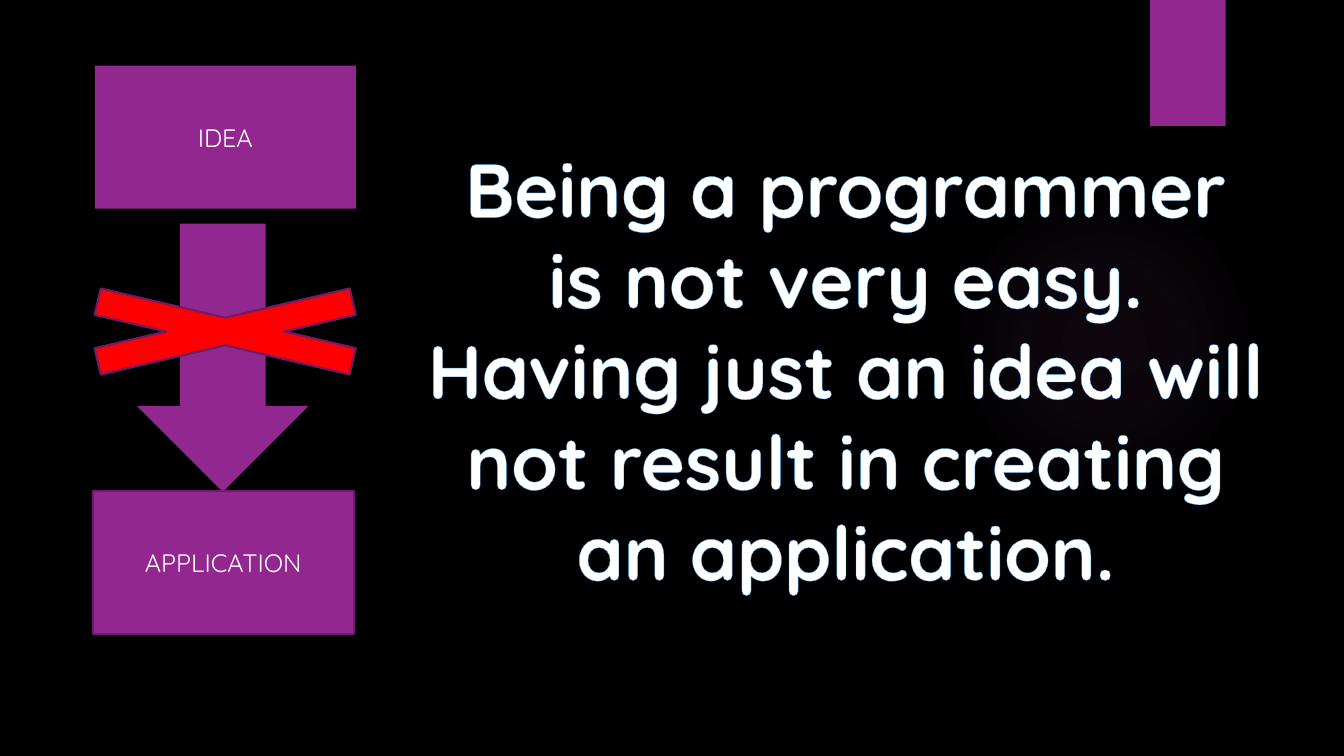
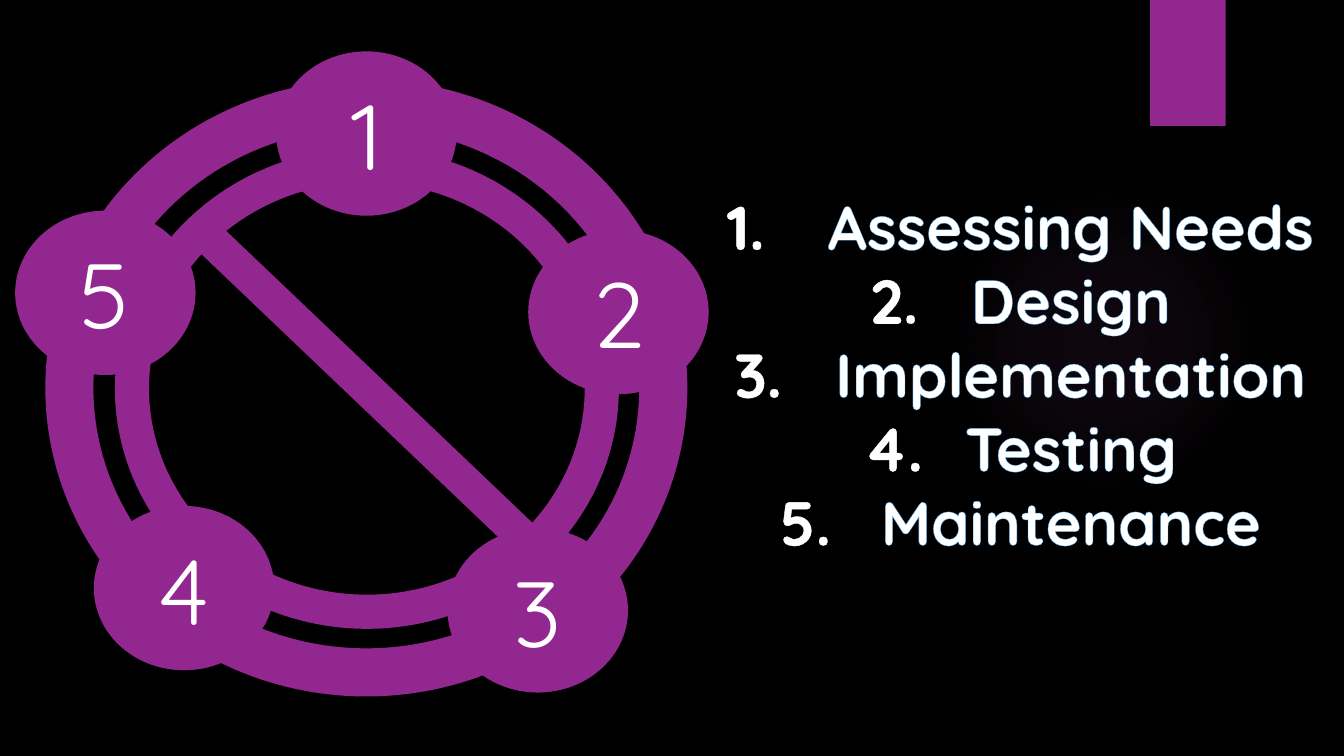
from dataclasses import dataclass
from typing import NamedTuple, Optional

from lxml import etree
from pptx import Presentation
from pptx.dml.color import RGBColor
from pptx.enum.shapes import MSO_SHAPE as Geom
from pptx.enum.text import MSO_ANCHOR as Anchor, MSO_AUTO_SIZE as AutoSize, PP_ALIGN as Align
from pptx.oxml import parse_xml
from pptx.oxml.ns import nsdecls, qn
from pptx.util import Pt


@dataclass(frozen=True)
class Theme:
    font: str = "Quicksand"
    background: RGBColor = RGBColor(0x00, 0x00, 0x00)
    text: RGBColor = RGBColor(0xFF, 0xFF, 0xFF)
    accent: RGBColor = RGBColor(0x92, 0x27, 0x8F)
    border: RGBColor = RGBColor(0x6C, 0x1D, 0x6A)
    glow: RGBColor = RGBColor(0xBA, 0x69, 0xB8)
    cross: RGBColor = RGBColor(0xFF, 0x00, 0x00)
    text_outline: RGBColor = RGBColor(0x45, 0xA5, 0xED)
    label_size: float = 18
    list_size: float = 44
    statement_size: float = 54
    node_size: float = 66
    border_width: float = 1.5
    outline_width: float = 0.8


THEME = Theme()


class Box(NamedTuple):
    left: float
    top: float
    width: float
    height: float

    def lengths(self) -> list:
        return [Pt(v) for v in self]


@dataclass(frozen=True)
class Figure:
    geom: Geom
    box: Box
    text: str = ""
    size: float = THEME.label_size
    fill: RGBColor = THEME.accent
    bordered: bool = False
    rotation: float = 0
    adjust: Optional[float] = None


class Node(NamedTuple):
    label: str
    left: float
    top: float


GLOW = Figure(Geom.OVAL, Box(677.5, 131.8, 221.8, 221.8), fill=THEME.glow)
GLOW_STOPS = ((0, 7), (36, 6), (69, 0))  # position and opacity, in percent
TAG = Figure(Geom.RECTANGLE, Box(821.5, 0, 54, 90))

STEP_W, STEP_H = 186.5, 102.2
IDEA_FIGURES = (
    Figure(Geom.RIGHT_ARROW, Box(63.4, 194.4, 191.5, 122.4), rotation=90),
    Figure(Geom.RECTANGLE, Box(67.7, 46.8, STEP_W, STEP_H), "IDEA"),
    Figure(Geom.RECTANGLE, Box(66.2, 350.6, STEP_W, STEP_H), "APPLICATION", bordered=True),
)
CROSS = Figure(Geom.MATH_MULTIPLY, Box(-14.4, 195.8, 350.6, 82.1),
               fill=THEME.cross, bordered=True)
STATEMENT = (
    "Being a programmer",
    "is not very easy.",
    "Having just an idea will not result in creating an application.",
)

NODE_W, NODE_H = 128.9, 117.4
RINGS = (
    Figure(Geom.NO_SYMBOL, Box(82.1, 105.8, 360, 343.4), adjust=0.071),
    Figure(Geom.DONUT, Box(32.4, 56.9, 458.6, 440.6), adjust=0.078),
)
NODES = (
    Node("1", 197.3, 36.7),
    Node("2", 377.3, 164.2),
    Node("3", 319.7, 377.3),
    Node("4", 67, 361.4),
    Node("5", 10.8, 150.5),
)
PHASES = ("Assessing Needs", "Design", "Implementation", "Testing", "Maintenance")
LIST_INDENT = 72


def style_run(r, size: float, bold: bool = False) -> None:
    r.font.name = THEME.font
    r.font.size = Pt(size)
    r.font.bold = bold
    r.font.color.rgb = THEME.text


def outline_run(r) -> None:
    ln = parse_xml(
        f'<a:ln {nsdecls("a")} w="{int(Pt(THEME.outline_width))}"><a:solidFill>'
        f'<a:srgbClr val="{THEME.text_outline}"/></a:solidFill></a:ln>')
    r.font._element.insert(0, ln)


def number_paragraph(p) -> None:
    """Give the paragraph an automatic number with a hanging indent."""
    pPr = p._p.get_or_add_pPr()
    indent = int(Pt(LIST_INDENT))
    pPr.set("marL", str(indent))
    pPr.set("indent", str(-indent))
    etree.SubElement(pPr, qn("a:buFont"), typeface="+mj-lt")
    etree.SubElement(pPr, qn("a:buAutoNum"), type="arabicPeriod")


def add_figure(s, fig: Figure):
    sp = s.shapes.add_shape(fig.geom, *fig.box.lengths())
    sp.shadow.inherit = False
    sp.rotation = fig.rotation
    sp.fill.solid()
    sp.fill.fore_color.rgb = fig.fill
    if fig.bordered:
        sp.line.color.rgb = THEME.border
        sp.line.width = Pt(THEME.border_width)
    else:
        sp.line.fill.background()
    if fig.adjust is not None:
        sp.adjustments[0] = fig.adjust
    if fig.text:
        tf = sp.text_frame
        tf.text = fig.text
        tf.vertical_anchor = Anchor.MIDDLE
        p = tf.paragraphs[0]
        p.alignment = Align.CENTER
        style_run(p.runs[0], fig.size)
    return sp


def add_glow(s) -> None:
    """Draw the faint radial light behind the text."""
    sp = add_figure(s, GLOW)
    stops = "".join(
        f'<a:gs pos="{pos * 1000}"><a:srgbClr val="{THEME.glow}">'
        f'<a:alpha val="{opacity * 1000}"/></a:srgbClr></a:gs>'
        for pos, opacity in GLOW_STOPS)
    gradient = parse_xml(
        f'<a:gradFill {nsdecls("a")}><a:gsLst>{stops}</a:gsLst><a:path path="circle">'
        '<a:fillToRect l="50000" t="50000" r="50000" b="50000"/></a:path></a:gradFill>')
    spPr = sp._element.spPr
    spPr.replace(spPr.find(qn("a:solidFill")), gradient)


def add_headline(s, box: Box, lines: tuple, size: float, numbered: bool = False) -> None:
    """Add centred, bold, outlined lines of text."""
    tf = s.shapes.add_textbox(*box.lengths()).text_frame
    tf.word_wrap = True
    tf.auto_size = AutoSize.SHAPE_TO_FIT_TEXT
    tf.text = "\n".join(lines)
    for p in tf.paragraphs:
        p.alignment = Align.CENTER
        if numbered:
            number_paragraph(p)
        style_run(p.runs[0], size, bold=True)
        outline_run(p.runs[0])


def new_slide(prs):
    s = prs.slides.add_slide(prs.slide_layouts[6])
    s.background.fill.solid()
    s.background.fill.fore_color.rgb = THEME.background
    add_glow(s)
    add_figure(s, TAG)
    return s


def build_idea_slide(prs) -> None:
    s = new_slide(prs)
    for fig in IDEA_FIGURES:
        add_figure(s, fig)
    add_headline(s, Box(285.8, 97.9, 636.5, 334.1), STATEMENT, THEME.statement_size)
    add_figure(s, CROSS)


def build_phases_slide(prs) -> None:
    s = new_slide(prs)
    for ring in RINGS:
        add_figure(s, ring)
    for node in NODES:
        box = Box(node.left, node.top, NODE_W, NODE_H)
        add_figure(s, Figure(Geom.OVAL, box, node.label, THEME.node_size))
    add_headline(s, Box(467.3, 131, 523.4, 273.6), PHASES, THEME.list_size, numbered=True)


def main() -> None:
    prs = Presentation()
    prs.slide_width, prs.slide_height = Pt(960), Pt(540)
    build_idea_slide(prs)
    build_phases_slide(prs)
    prs.save("out.pptx")


if __name__ == "__main__":
    main()
